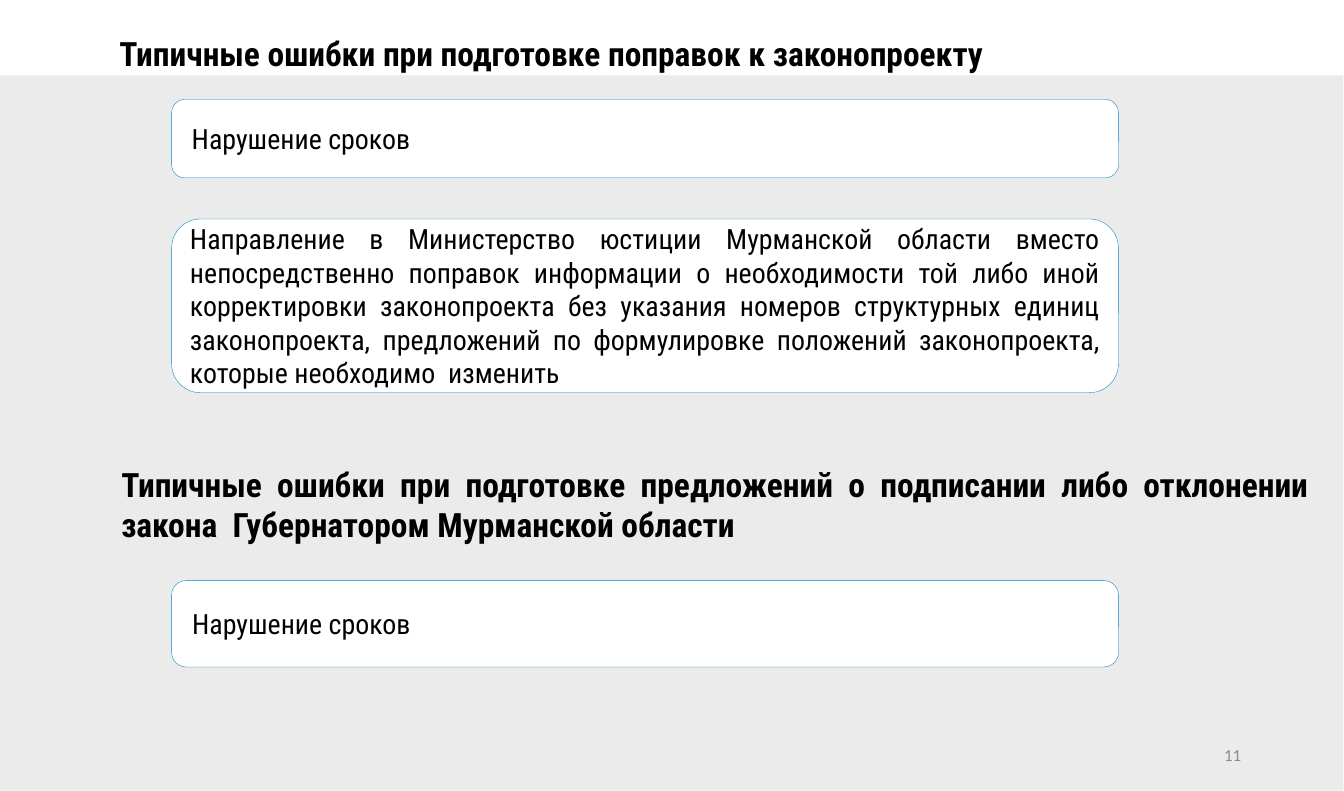
"""Build the slide on typical mistakes in amendments and proposals on a law."""
import pptx
import pptx.util
import pptx.dml.color
import pptx.enum.shapes
import pptx.enum.text

Inches = pptx.util.Inches
Pt = pptx.util.Pt
RGBColor = pptx.dml.color.RGBColor
MSO_SHAPE = pptx.enum.shapes.MSO_SHAPE
ALIGN = pptx.enum.text.PP_ALIGN
ANCHOR = pptx.enum.text.MSO_ANCHOR

WHITE = RGBColor(0xFF, 0xFF, 0xFF)
BLACK = RGBColor(0x00, 0x00, 0x00)
PANEL_GREY = RGBColor(0xEB, 0xEB, 0xEB)
NUMBER_GREY = RGBColor(0x8C, 0x8C, 0x8C)
BORDER_BLUE = RGBColor(0x00, 0x82, 0xC8)
TEXT_FONT = "Roboto Condensed"
CM_PER_INCH = 2.54


def write(holder, text, size, align, anchor, font=TEXT_FONT, color=BLACK, bold=False):
    frame = holder.text_frame
    frame.text = text
    frame.word_wrap = True
    frame.auto_size = pptx.enum.text.MSO_AUTO_SIZE.NONE
    frame.vertical_anchor = anchor
    paragraph = frame.paragraphs[0]
    paragraph.alignment = align
    paragraph.line_spacing = 1.0
    style = paragraph.runs[0].font
    style.name, style.size, style.bold = font, Pt(size), bold
    style.color.rgb = color


def add_block(kind, left, top, width, height, fill):
    block = slide.shapes.add_shape(
        kind, Inches(left), Inches(top), Inches(width), Inches(height))
    block.shadow.inherit = False
    block.fill.solid()
    block.fill.fore_color.rgb = fill
    block.line.fill.background()
    return block


deck = pptx.Presentation()
deck.slide_width = Inches(34 / CM_PER_INCH)
deck.slide_height = Inches(20 / CM_PER_INCH)
slide = deck.slides.add_slide(deck.slide_layouts[5])

amendments_heading = slide.shapes.title
amendments_heading.left, amendments_heading.top = Inches(0.4), Inches(0.28)
amendments_heading.width, amendments_heading.height = Inches(12.02), Inches(0.81)
write(amendments_heading, "Типичные ошибки при подготовке поправок к законопроекту",
      24, ALIGN.JUSTIFY, ANCHOR.TOP, bold=True)
heading_properties = amendments_heading.text_frame.paragraphs[0]._p.get_or_add_pPr()
heading_properties.set("marL", "0")
heading_properties.set("indent", str(Inches(0.69)))

panel = add_block(MSO_SHAPE.RECTANGLE, 0, 0.75, 13.38, 7.12, PANEL_GREY)
amendments_heading.element.addprevious(panel.element)

missed_deadlines = " Нарушение сроков"
vague_proposals = (
    "Направление в Министерство юстиции Мурманской области вместо непосредственно "
    "поправок информации о необходимости той либо иной корректировки законопроекта "
    "без указания номеров структурных единиц законопроекта, предложений по "
    "формулировке положений законопроекта, которые необходимо  изменить")
mistakes = [
    (0.99, 0.78, missed_deadlines),
    (2.18, 1.73, vague_proposals),
    (5.78, 0.86, missed_deadlines),
]
for top, height, mistake in mistakes:
    card = add_block(MSO_SHAPE.ROUNDED_RECTANGLE, 1.71, top, 9.43, height, WHITE)
    card.line.color.rgb = BORDER_BLUE
    card.line.width = Pt(0.25)
    write(card, mistake, 20, ALIGN.JUSTIFY, ANCHOR.MIDDLE)

page_number = slide.shapes.add_textbox(Inches(9.45), Inches(7.3), Inches(3.01), Inches(0.42))
write(page_number, "11", 12.1, ALIGN.RIGHT, ANCHOR.MIDDLE, "Calibri", NUMBER_GREY)

signing_heading = slide.shapes.add_textbox(
    Inches(1.11), Inches(4.57), Inches(12.02), Inches(1.21))
write(signing_heading,
      "Типичные ошибки при подготовке предложений о подписании либо отклонении "
      "закона  Губернатором Мурманской области",
      24, ALIGN.JUSTIFY, ANCHOR.TOP, bold=True)

deck.save("out.pptx")
